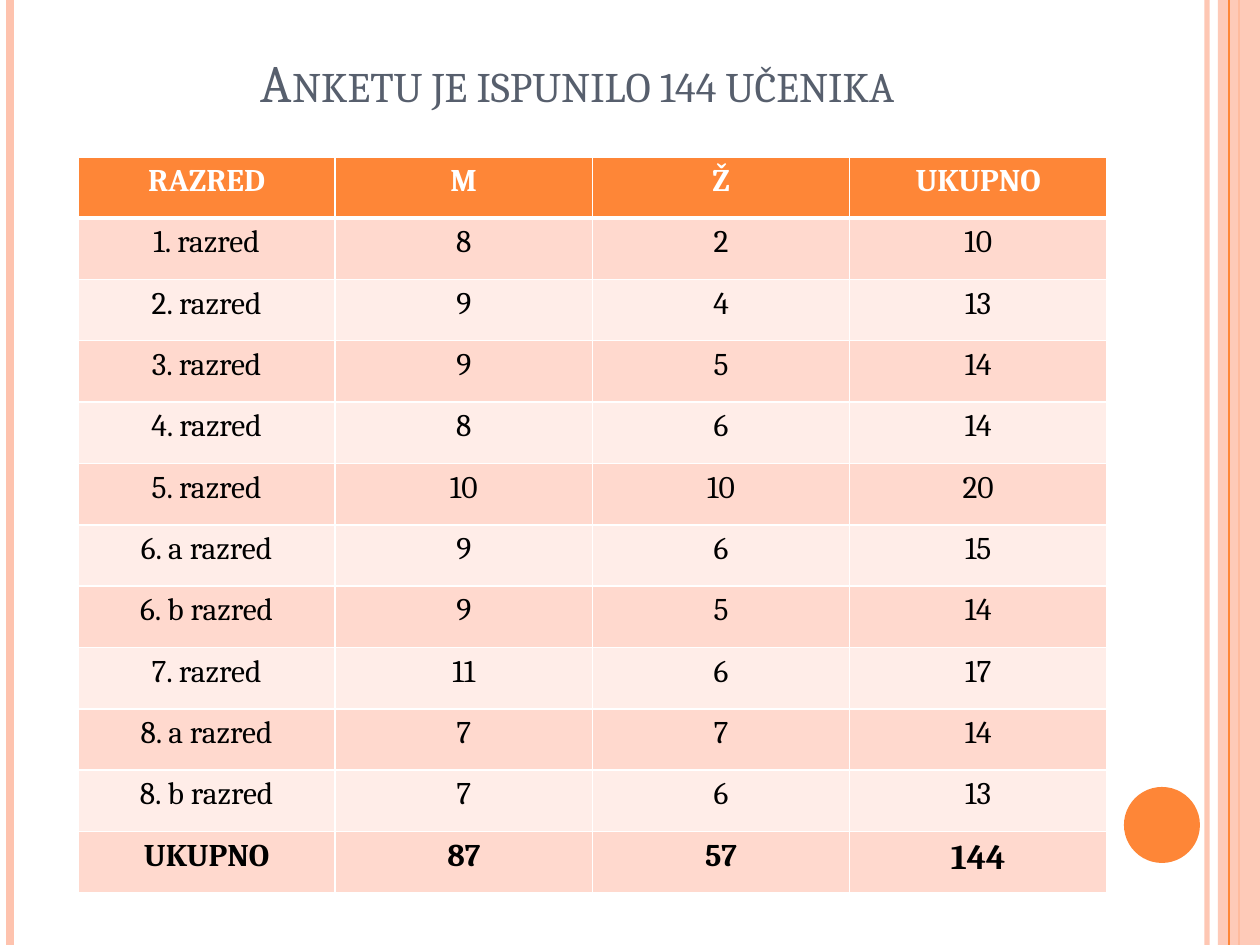
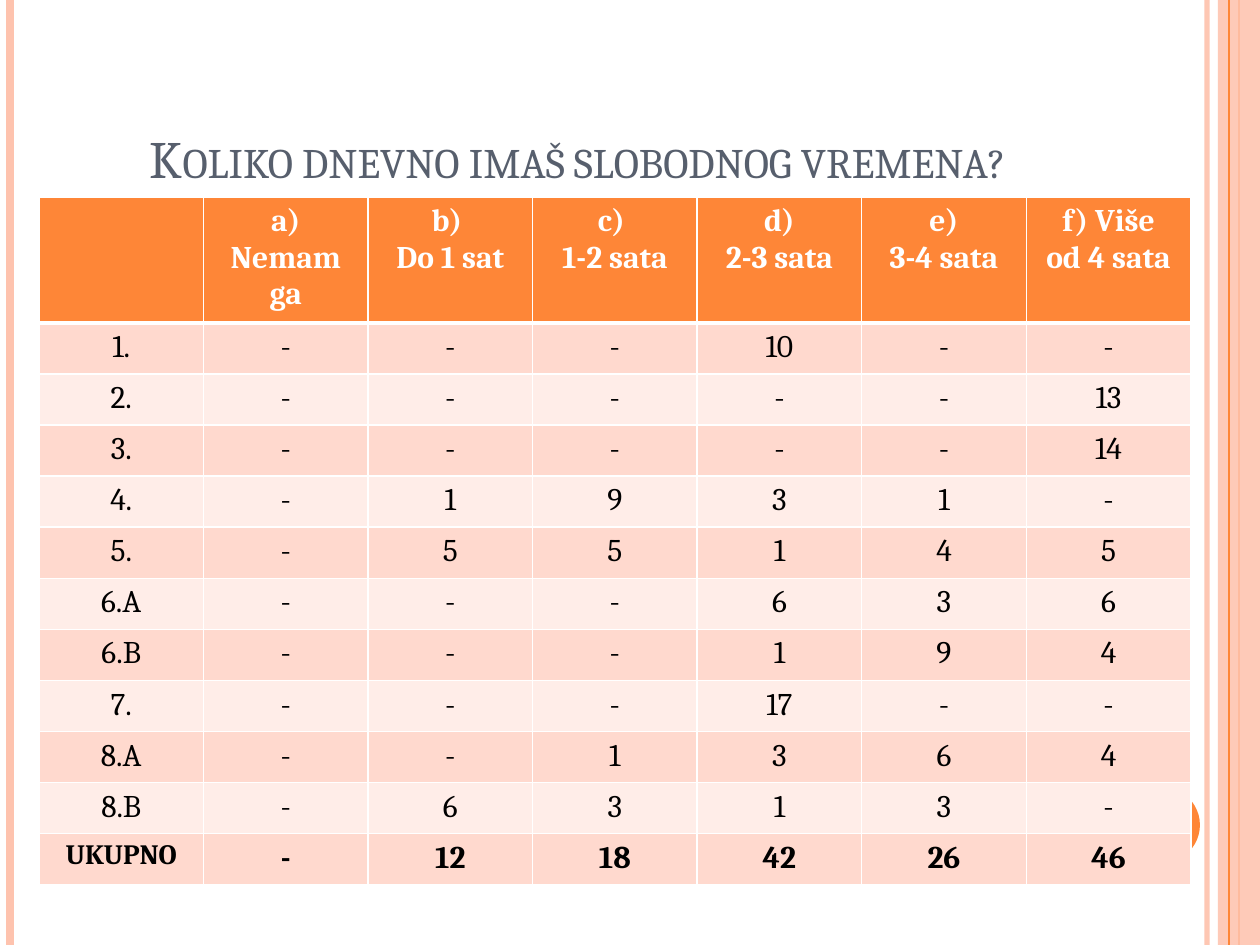
from lxml.etree import SubElement as Sub
from pptx import Presentation
from pptx.dml.color import RGBColor as RGB
from pptx.enum.shapes import MSO_CONNECTOR as CON, MSO_SHAPE as SHAPE
from pptx.enum.text import MSO_ANCHOR as ANCHOR, PP_ALIGN as ALIGN
from pptx.oxml.ns import qn
from pptx.util import Emu, Pt

# Content: title box and table box in px, sizes of the total row in points
SLIDES = [
    dict(
        title="Anketu je ispunilo 144 učenika",
        title_box=(63, 38, 1029, 81),
        box=(78, 157, 1029, 736),
        head_high=61,
        total_sizes=[18, 18, 18, 20],
        rows=[
            ("RAZRED", "M", "Ž", "UKUPNO"),
            ("1. razred", 8, 2, 10),
            ("2. razred", 9, 4, 13),
            ("3. razred", 9, 5, 14),
            ("4. razred", 8, 6, 14),
            ("5. razred", 10, 10, 20),
            ("6. a razred", 9, 6, 15),
            ("6. b razred", 9, 5, 14),
            ("7. razred", 11, 6, 17),
            ("8. a razred", 7, 7, 14),
            ("8. b razred", 7, 6, 13),
            ("UKUPNO", 87, 57, 144),
        ],
    ),
    dict(
        title="Koliko dnevno imaš slobodnog vremena?",
        title_box=(63, 38, 1029, 157),
        box=(39, 197, 1152, 684),
        head_high=122,
        total_sizes=[16] + [18] * 6,
        rows=[
            ("", "a) Nemam ga", "b) \nDo 1 sat", "c) \n1-2 sata",
             "d)\n2-3 sata", "e)\n3-4 sata", "f) Više\nod 4 sata"),
            ("1.", "-", "-", "-", 10, "-", "-"),
            ("2.", "-", "-", "-", "-", "-", 13),
            ("3.", "-", "-", "-", "-", "-", 14),
            ("4.", "-", 1, 9, 3, 1, "-"),
            ("5.", "-", 5, 5, 1, 4, 5),
            ("6.A", "-", "-", "-", 6, 3, 6),
            ("6.B", "-", "-", "-", 1, 9, 4),
            ("7.", "-", "-", "-", 17, "-", "-"),
            ("8.A", "-", "-", 1, 3, 6, 4),
            ("8.B", "-", 6, 3, 1, 3, "-"),
            ("UKUPNO", "-", 12, 18, 42, 26, 46),
        ],
    ),
]

# Shared look
WIDE, HIGH = 1260, 945
FONT = "Cambria"
ORANGE = RGB(0xFE, 0x86, 0x37)
PEACH = RGB(0xFE, 0xC3, 0xAE)
SLATE = RGB(0x57, 0x5F, 0x6D)
WHITE = RGB(0xFF, 0xFF, 0xFF)
BLACK = RGB(0, 0, 0)
BANDS = RGB(0xFF, 0xED, 0xE8), RGB(0xFF, 0xD9, 0xCE)


def px(n):
    return Emu(round(n * 914400 / 126))


def fade(part, percent):
    for color in part.iter(qn("a:srgbClr")):
        Sub(color, qn("a:alpha"), val=str(percent * 1000))


def stripe(slide, x, color, width, percent=100):
    line = slide.shapes.add_connector(CON.STRAIGHT, px(x), 0, px(x), px(HIGH))
    line.line.color.rgb = color
    line.line.width = Pt(width)
    props = line._element.spPr
    Sub(props, qn("a:effectLst"))
    if percent < 100:
        fade(props, percent)


def solid(slide, kind, box, color):
    shape = slide.shapes.add_shape(kind, *map(px, box))
    shape.shadow.inherit = False
    shape.fill.solid()
    shape.fill.fore_color.rgb = color
    shape.line.fill.background()
    return shape


def frame(slide):
    stripe(slide, 1207, PEACH, 3, 93)
    stripe(slide, 10, PEACH, 4.5)
    stripe(slide, 1239, ORANGE, 1.5)
    band = solid(slide, SHAPE.RECTANGLE, (1218, 0, WIDE - 1218, HIGH), PEACH)
    fade(band._element.spPr, 87)
    stripe(slide, 1229, ORANGE, 0.75)
    solid(slide, SHAPE.OVAL, (1124, 787, 76, 76), ORANGE)


def style(text, size, color, bold=False):
    for para in text.paragraphs:
        para.alignment = ALIGN.CENTER
        for run in para.runs:
            font = run.font
            font.name, font.size, font.bold = FONT, Pt(size), bold
            font.color.rgb = color


def heading(slide, words, box):
    text = slide.shapes.add_textbox(*map(px, box)).text_frame
    text.word_wrap = True
    text.vertical_anchor = ANCHOR.BOTTOM
    text.text = words
    style(text, 30, SLATE)
    text.paragraphs[0].runs[0].font._element.set("cap", "small")


def edges(cell, top, bottom):
    # Borders come before the fill in the cell properties
    props = cell._tc.get_or_add_tcPr()
    for side, width in zip("LRTB", (1, 1, top, bottom)):
        line = Sub(props, qn(f"a:ln{side}"), w=str(Pt(width)))
        Sub(Sub(line, qn("a:solidFill")), qn("a:srgbClr"), val=str(WHITE))


def grid(slide, rows, box, head_high, total_sizes):
    last = len(rows) - 1
    table = slide.shapes.add_table(len(rows), len(rows[0]),
                                   *map(px, box)).table
    for col in table.columns:
        col.width = px(box[2] / len(rows[0]))
    for r, row in enumerate(rows):
        table.rows[r].height = px((box[3] - head_high) / last if r
                                  else head_high)
        for c, value in enumerate(row):
            cell = table.cell(r, c)
            edges(cell, 3 if r == 1 else 1, 3 if r == 0 else 1)
            cell.fill.solid()
            cell.fill.fore_color.rgb = BANDS[r % 2] if r else ORANGE
            cell.text_frame.text = str(value)
            style(cell.text_frame, total_sizes[c] if r == last else 18,
                  BLACK if r else WHITE, r in (0, last))


def main():
    deck = Presentation()
    deck.slide_width, deck.slide_height = px(WIDE), px(HIGH)
    for page in SLIDES:
        slide = deck.slides.add_slide(deck.slide_layouts[6])
        frame(slide)
        heading(slide, page["title"], page["title_box"])
        grid(slide, page["rows"], page["box"], page["head_high"],
             page["total_sizes"])
    deck.save("out.pptx")


if __name__ == "__main__":
    main()
